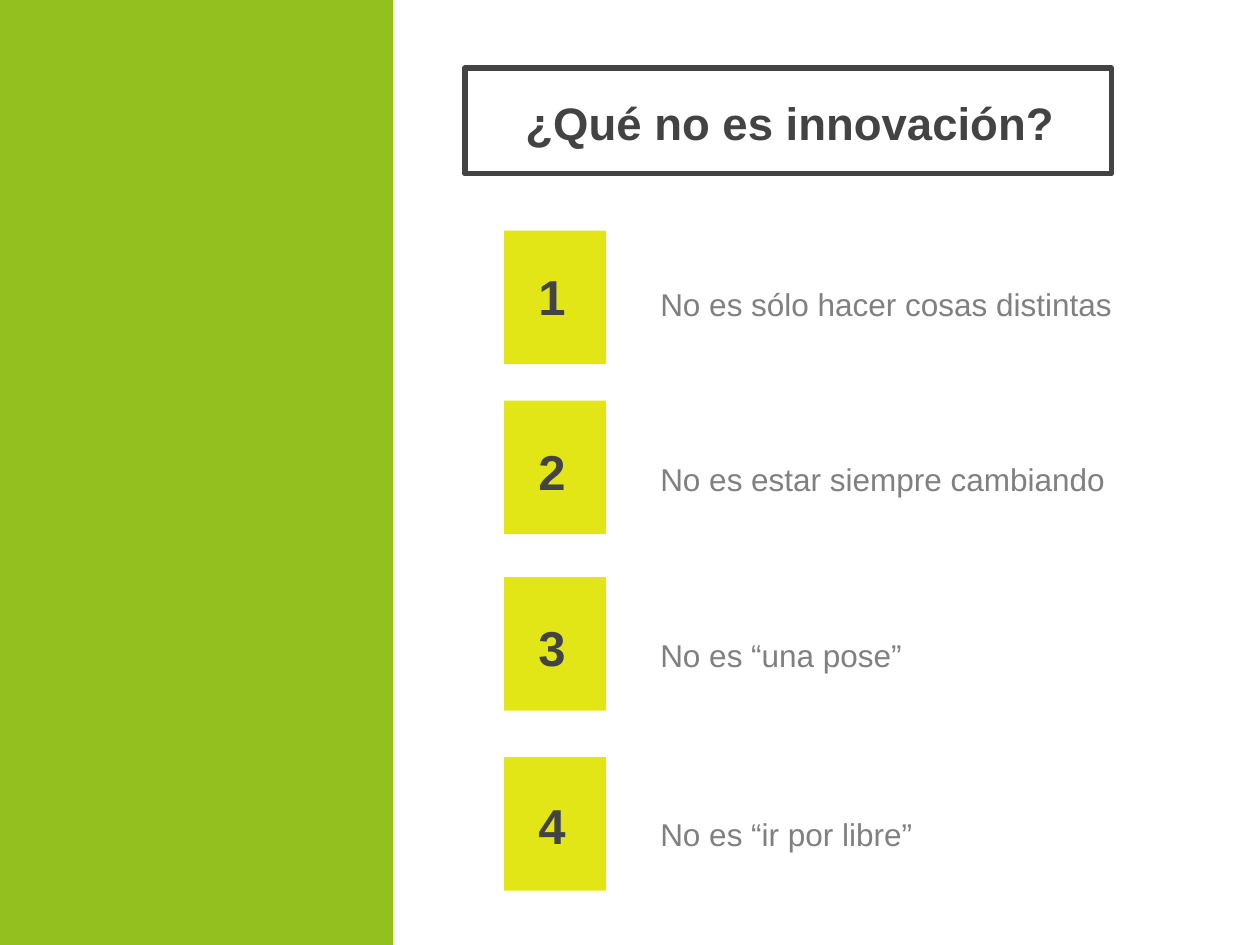
from lxml import etree
from pptx import Presentation
from pptx.dml.color import RGBColor
from pptx.enum.shapes import MSO_SHAPE
from pptx.enum.text import MSO_ANCHOR, MSO_AUTO_SIZE, PP_ALIGN
from pptx.oxml.ns import qn
from pptx.util import Inches, Pt

RECTANGLE = MSO_SHAPE.RECTANGLE
TOP, MIDDLE = MSO_ANCHOR.TOP, MSO_ANCHOR.MIDDLE
LEFT, CENTER = PP_ALIGN.LEFT, PP_ALIGN.CENTER
NO_AUTOFIT = MSO_AUTO_SIZE.NONE

FOUR_TEXTS_LAYOUT = 4
FONT = "Arial"
DARK, GRAY, GREEN, YELLOW = "434343", "808080", "93C01F", "E2E616"

# text, text width, square top, number top, text top
ITEMS = [
    ("No es sólo hacer cosas distintas", 4.19, 1.83, 1.88, 2.16),
    ("No es estar siempre cambiando", 4.19, 3.18, 3.27, 3.55),
    ("No es “una pose”", 3.68, 4.58, 4.67, 4.95),
    ("No es “ir por libre”", 3.68, 6.01, 6.08, 6.37),
]


def rgb(color):
    """Turn a hex string into a colour."""
    return RGBColor.from_string(color)


def place(sp, left, top, width, height):
    """Move and size a shape, in inches."""
    sp.left, sp.top = Inches(left), Inches(top)
    sp.width, sp.height = Inches(width), Inches(height)


def add_rect(s, left, top, width, height, fill=None, line=None):
    """Add a plain rectangle with an optional fill and outline."""
    sp = s.shapes.add_shape(RECTANGLE, Inches(left), Inches(top),
                            Inches(width), Inches(height))
    sp.shadow.inherit = False
    if fill:
        sp.fill.solid()
        sp.fill.fore_color.rgb = rgb(fill)
    else:
        sp.fill.background()
    if line:
        sp.line.color.rgb = rgb(line)
        sp.line.width = Pt(3)
    else:
        sp.line.fill.background()


def set_text(sp, text, size, color, bold=False, align=LEFT, anchor=TOP,
             spacing=1.0):
    """Write one unbulleted paragraph into a shape."""
    tf = sp.text_frame
    tf.word_wrap = True
    tf.auto_size = NO_AUTOFIT
    tf.vertical_anchor = anchor
    tf.margin_left = tf.margin_right = Inches(0.1)
    tf.margin_top = tf.margin_bottom = Inches(0.1)
    p = tf.paragraphs[0]
    pPr = p._p.get_or_add_pPr()
    pPr.set("marL", "0")
    pPr.set("indent", "0")
    etree.SubElement(pPr, qn("a:buNone"))
    p.alignment = align
    p.line_spacing = spacing
    p.space_before = Pt(0)
    r = p.add_run()
    r.text = text
    r.font.name = FONT
    r.font.size = Pt(size)
    r.font.bold = bold
    r.font.color.rgb = rgb(color)


def add_number(s, number, top):
    """Add the number centred over its square."""
    sp = s.shapes.add_textbox(0, 0, 0, 0)
    place(sp, 3.69, top, 1.38, 0.93)
    set_text(sp, str(number), 28, DARK, bold=True, align=CENTER, anchor=MIDDLE)


def main():
    """Build the slide."""
    prs = Presentation()
    prs.slide_width, prs.slide_height = Inches(10), Inches(7.5)
    s = prs.slides.add_slide(prs.slide_layouts[FOUR_TEXTS_LAYOUT])
    title, *bodies = s.placeholders

    add_rect(s, 0, 0, 3.12, 7.5, fill=GREEN)
    add_rect(s, 3.69, 0.54, 5.13, 0.84, line=DARK)
    place(title, 4.07, 0.13, 5.81, 1.62)
    set_text(title, "¿Qué no es innovación?", 26, DARK, bold=True,
             anchor=MIDDLE, spacing=1.15)

    for number, (body, item) in enumerate(zip(bodies, ITEMS), start=1):
        text, width, square_top, number_top, text_top = item
        add_rect(s, 4, square_top, 0.81, 1.06, fill=YELLOW)
        add_number(s, number, number_top)
        place(body, 5.14, text_top, width, 0.84)
        set_text(body, text, 18, GRAY)

    prs.save("out.pptx")


if __name__ == "__main__":
    main()
